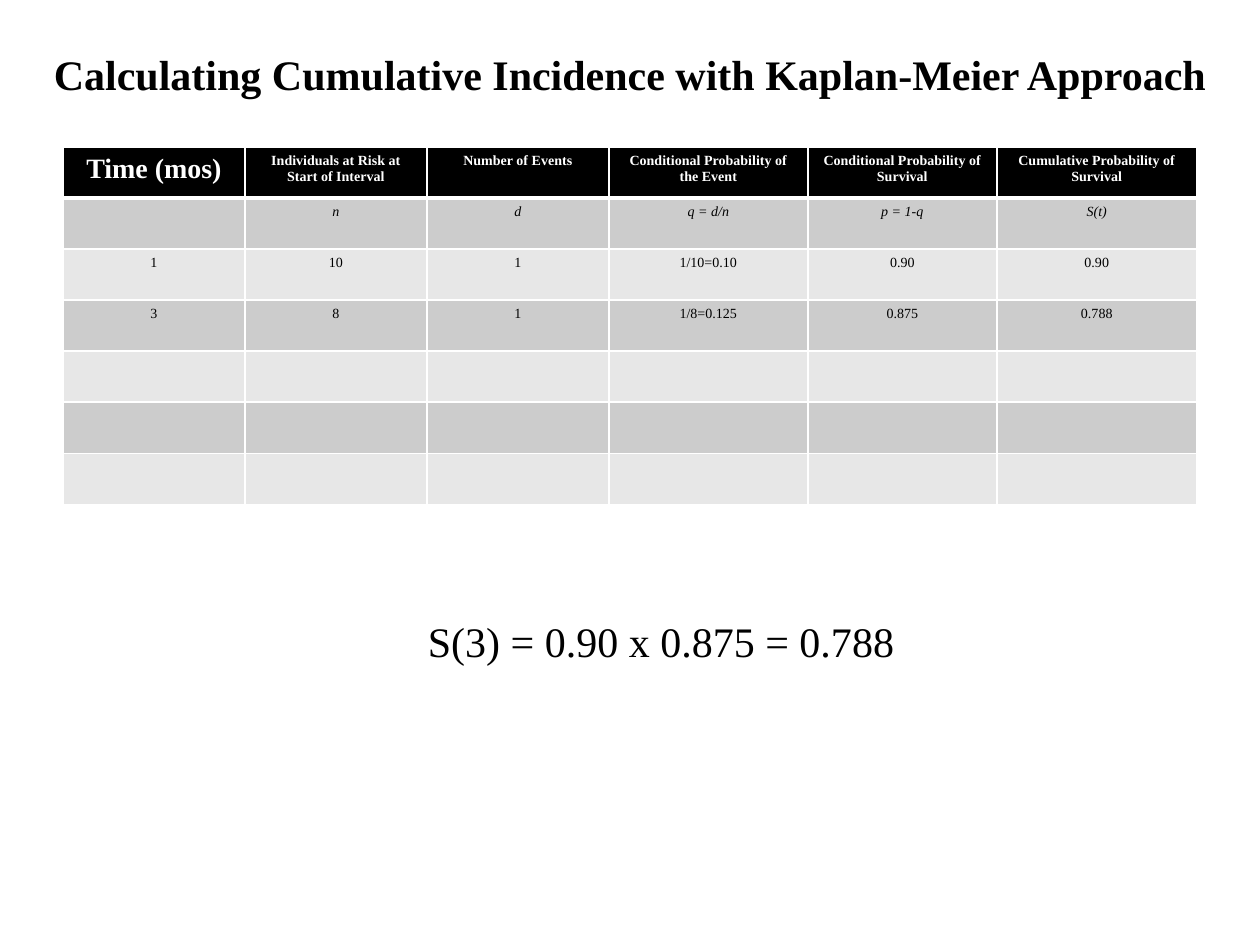
import dataclasses

import lxml.etree
import pptx
import pptx.dml.color
import pptx.enum.text
import pptx.oxml.ns
import pptx.util

PX = pptx.util.Inches(1) // 126
FONT = "Times New Roman"
BLACK, WHITE = "000000", "FFFFFF"
BANDS = ("CCCCCC", "E7E7E7")
HEADS = (
    "Time (mos)",
    "Individuals at Risk at Start of Interval",
    "Number of Events",
    "Conditional Probability of the Event",
    "Conditional Probability of Survival",
    "Cumulative Probability of Survival",
)
BODY = (
    ("", "n", "d", "q = d/n", "p = 1-q", "S(t)"),
    ("1", "10", "1", "1/10=0.10", "0.90", "0.90"),
    ("3", "8", "1", "1/8=0.125", "0.875", "0.788"),
) + (("",) * len(HEADS),) * 3
WIDTHS = (182, 182, 182, 199, 189, 200)
ROW = 51


@dataclasses.dataclass(frozen=True)
class Box:
    left: int
    top: int
    width: int
    height: int

    def emu(self) -> tuple[int, ...]:
        return tuple(n * PX for n in dataclasses.astuple(self))


def paint(target, color: str) -> None:
    """Give a fill or line format one solid colour."""
    target.solid()
    target.fore_color.rgb = pptx.dml.color.RGBColor.from_string(color)


def write(frame, text: str, *, size: int, color: str = BLACK,
          bold: bool = False, italic: bool = False) -> None:
    par = frame.paragraphs[0]
    par.alignment = pptx.enum.text.PP_ALIGN.CENTER
    if not text:
        return
    run = par.add_run()
    run.text = text
    font = run.font
    font.name, font.size = FONT, pptx.util.Pt(size)
    font.bold, font.italic = bold, italic
    paint(font.fill, color)


def edge(cell, top: int, base: int) -> None:
    """Draw white cell borders; top and base are widths in points."""
    props = cell._tc.get_or_add_tcPr()
    sides = {"lnL": 1, "lnR": 1, "lnT": top, "lnB": base}
    for place, (side, width) in enumerate(sides.items()):
        line = lxml.etree.Element(pptx.oxml.ns.qn(f"a:{side}"),
                                  w=str(pptx.util.Pt(width)))
        fill = lxml.etree.SubElement(line, pptx.oxml.ns.qn("a:solidFill"))
        lxml.etree.SubElement(fill, pptx.oxml.ns.qn("a:srgbClr"), val=WHITE)
        props.insert(place, line)


def draw_title(slide, box: Box, text: str) -> None:
    title = slide.shapes.title
    title.left, title.top, title.width, title.height = box.emu()
    frame = title.text_frame
    frame.word_wrap = True
    frame.auto_size = pptx.enum.text.MSO_AUTO_SIZE.NONE
    frame.vertical_anchor = pptx.enum.text.MSO_ANCHOR.TOP
    write(frame, text, size=24, bold=True)


def draw_table(slide, left: int, top: int) -> None:
    rows = (HEADS, *BODY)
    box = Box(left, top, sum(WIDTHS), ROW * len(rows))
    table = slide.shapes.add_table(len(rows), len(HEADS), *box.emu()).table
    for col, width in zip(table.columns, WIDTHS):
        col.width = width * PX
    for r, row in enumerate(rows):
        table.rows[r].height = ROW * PX
        head = r == 0
        for c, text in enumerate(row):
            cell = table.cell(r, c)
            paint(cell.fill, BLACK if head else BANDS[(r - 1) % 2])
            edge(cell, top=3 if r == 1 else 1, base=3 if head else 1)
            write(cell.text_frame, text, size=16 if head and c == 0 else 8,
                  color=WHITE if head else BLACK, bold=head, italic=r == 1)


def draw_text(slide, box: Box, text: str) -> None:
    frame = slide.shapes.add_textbox(*box.emu()).text_frame
    frame.word_wrap = True
    write(frame, text, size=24)


def main() -> None:
    deck = pptx.Presentation()
    deck.slide_width, deck.slide_height = 1260 * PX, 945 * PX
    slide = deck.slides.add_slide(deck.slide_layouts[5])
    draw_title(slide, Box(21, 42, 1218, 63),
               "Calculating Cumulative Incidence with Kaplan-Meier Approach")
    draw_table(slide, 63, 147)
    draw_text(slide, Box(346, 609, 630, 63), "S(3) = 0.90 x 0.875 = 0.788")
    deck.save("out.pptx")


if __name__ == "__main__":
    main()
